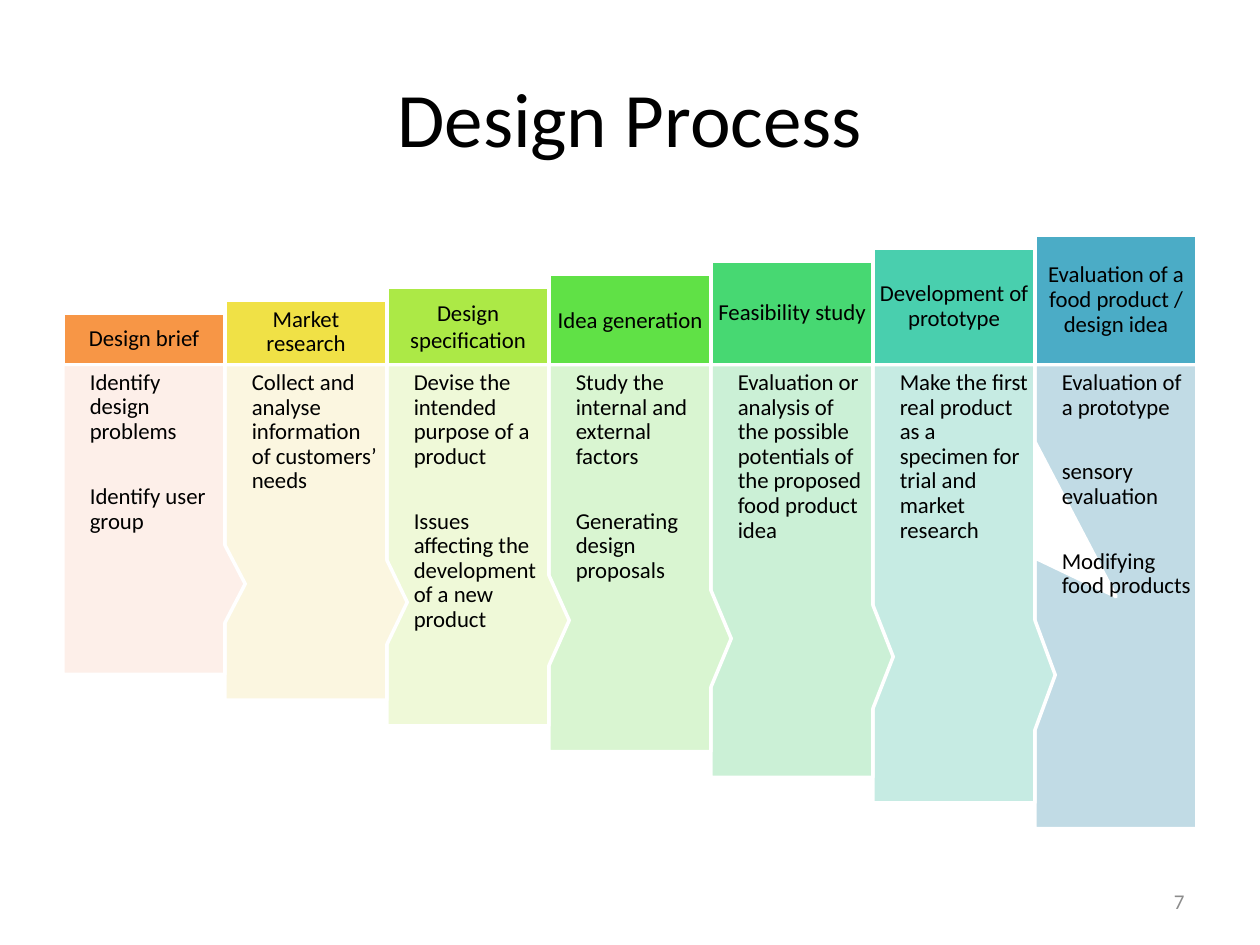
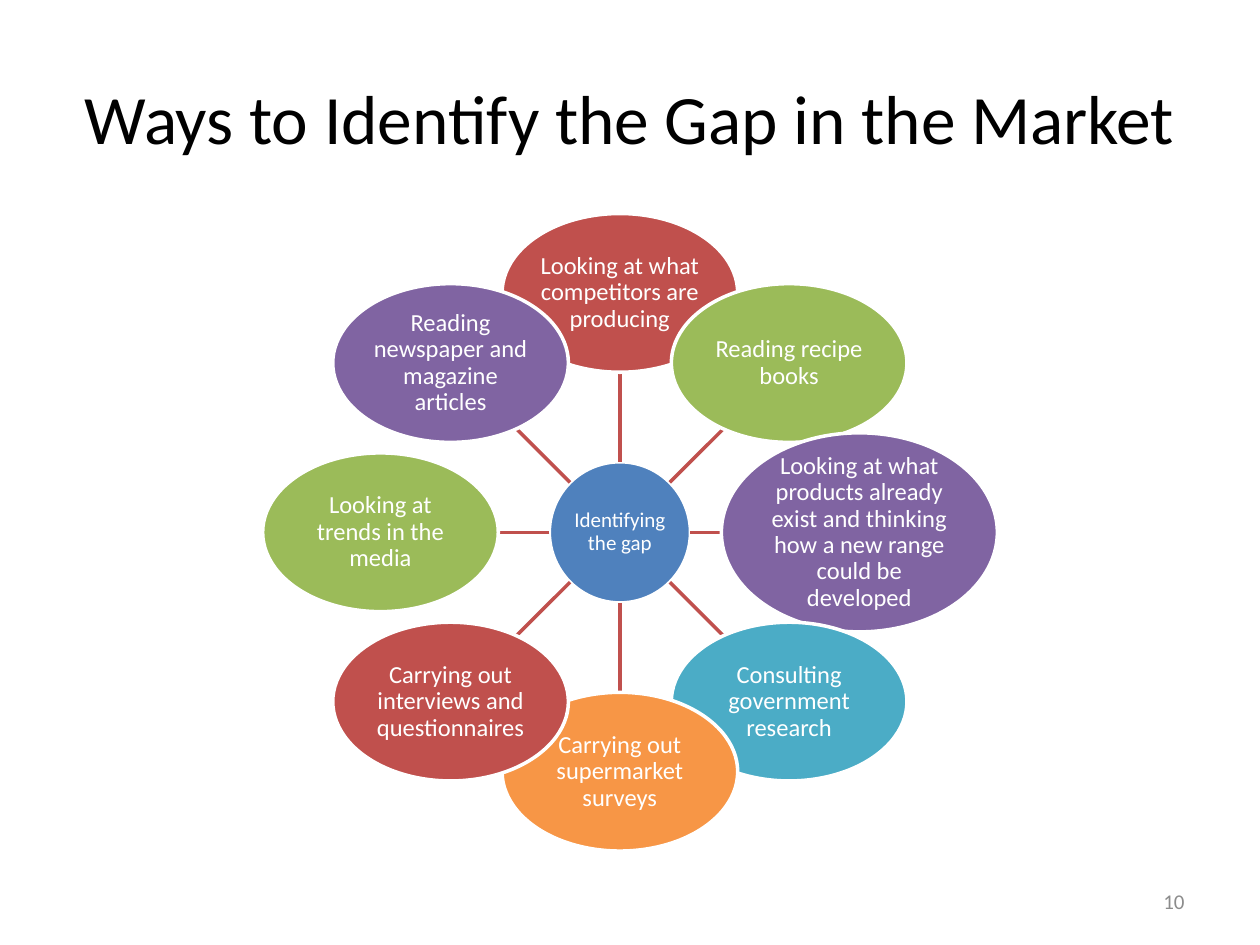
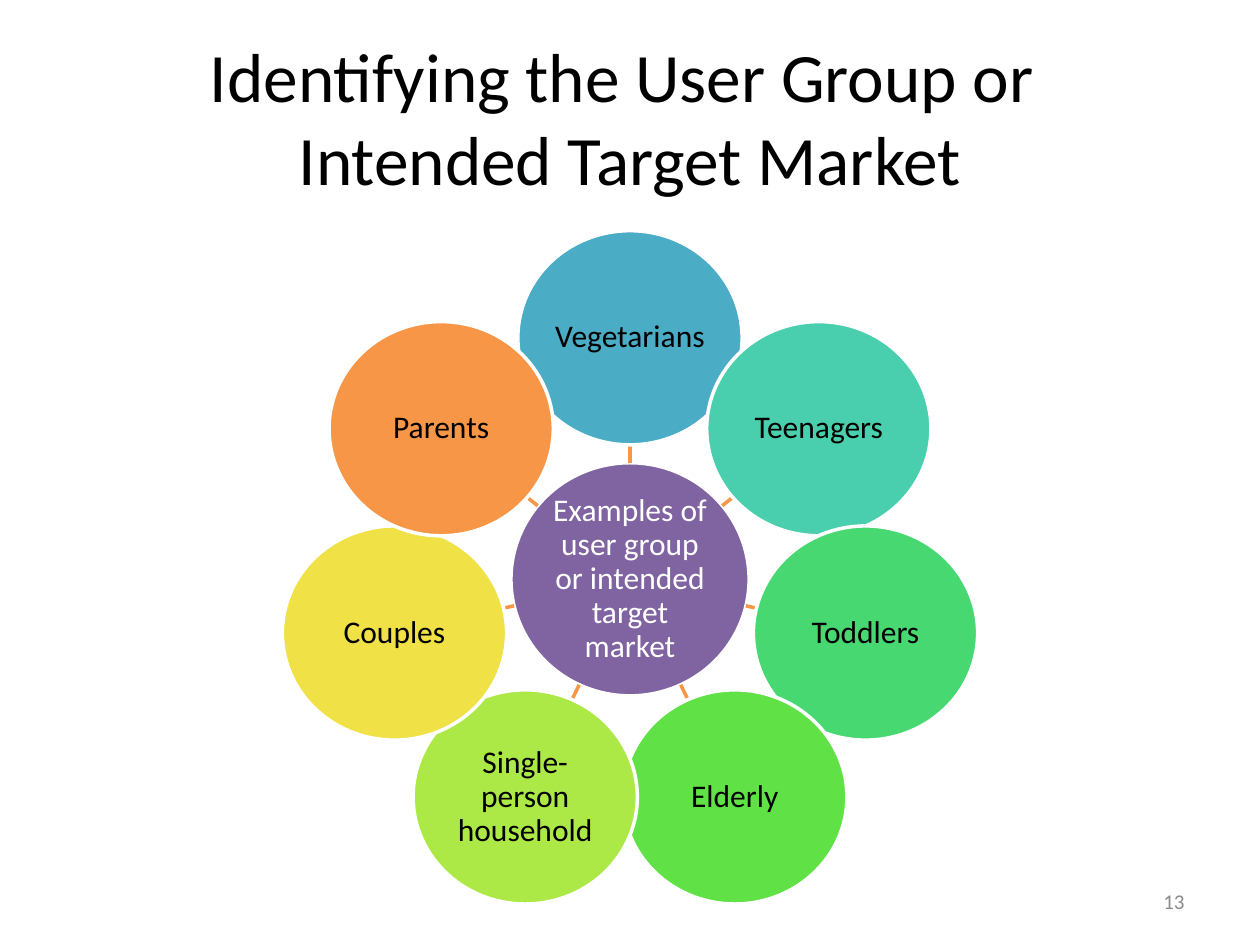
from dataclasses import dataclass
from math import cos, hypot, pi, sin

from lxml import etree
from pptx import Presentation
from pptx.dml.color import RGBColor
from pptx.enum.shapes import MSO_CONNECTOR, MSO_SHAPE
from pptx.enum.text import MSO_ANCHOR, PP_ALIGN
from pptx.oxml.ns import qn
from pptx.util import Inches, Pt

LEFT, CENTER, RIGHT = PP_ALIGN.LEFT, PP_ALIGN.CENTER, PP_ALIGN.RIGHT
TOP, MIDDLE = MSO_ANCHOR.TOP, MSO_ANCHOR.MIDDLE
RECTANGLE, ELLIPSE = MSO_SHAPE.RECTANGLE, MSO_SHAPE.OVAL
CALLOUT = MSO_SHAPE.RECTANGULAR_CALLOUT
STRAIGHT = MSO_CONNECTOR.STRAIGHT

COLUMNS, ROWS = 100, 75  # grid of square cells over the whole slide
BLANK_LAYOUT = 6


@dataclass(frozen=True)
class Theme:
    font: str = "Calibri"
    ink: str = "000000"
    white: str = "FFFFFF"
    muted: str = "8C8C8C"
    blue: str = "4F81BD"
    red: str = "C0504D"
    olive: str = "9BBB59"
    purple: str = "8064A2"
    aqua: str = "4BACC6"
    orange: str = "F79646"
    yellow: str = "F0E146"
    lime: str = "ACE946"
    green: str = "60E146"
    emerald: str = "47D872"
    teal: str = "49CFAE"
    title_size: float = 44
    long_title_size: float = 39.6
    large_size: float = 18
    node_size: float = 14
    step_size: float = 13
    small_size: float = 12
    line_width: float = 2
    tight: float = 0.9


THEME = Theme()


def write_text(frame, paragraphs, *, size, color=THEME.ink, align=CENTER,
               anchor=MIDDLE, insets=(1, 0.5, 1, 0.5), leading=1.0, gap=0):
    """Fill a text frame; insets are left, top, right, bottom in grid cells."""
    frame.word_wrap = True
    frame.vertical_anchor = anchor
    (frame.margin_left, frame.margin_top,
     frame.margin_right, frame.margin_bottom) = [Inches(i / 10) for i in insets]
    for index, text in enumerate(paragraphs):
        para = frame.add_paragraph() if index else frame.paragraphs[0]
        para.text = text
        para.alignment = align
        para.line_spacing = leading
        para.space_after = Pt(gap)
        for span in para.runs:
            span.font.name = THEME.font
            span.font.size = Pt(size)
            span.font.color.rgb = RGBColor.from_string(color)


class SlideBuilder:
    def __init__(self, theme):
        self.theme = theme
        self.deck = Presentation()
        self.deck.slide_width, self.deck.slide_height = Inches(10), Inches(7.5)
        self.page = None

    def place(self, x, y):
        """Turn a grid position or extent into slide lengths."""
        return (round(self.deck.slide_width * x / COLUMNS),
                round(self.deck.slide_height * y / ROWS))

    def start_page(self, title, number, title_size):
        layout = self.deck.slide_layouts[BLANK_LAYOUT]
        self.page = self.deck.slides.add_slide(layout)
        self.text_box(5, 3, 90, 12.5, title, size=title_size)
        self.text_box(71.67, 69.5, 23.33, 4, str(number), align=RIGHT,
                      size=self.theme.small_size, color=self.theme.muted)

    def text_box(self, left, top, width, height, text, **style):
        box = self.page.shapes.add_textbox(*self.place(left, top),
                                           *self.place(width, height))
        write_text(box.text_frame, [text], **style)

    def panel(self, kind, left, top, width, height, fill, paragraphs,
              adjustments=(), **style):
        shape = self.page.shapes.add_shape(kind, *self.place(left, top),
                                           *self.place(width, height))
        for index, value in enumerate(adjustments):
            shape.adjustments[index] = value
        shape.shadow.inherit = False
        shape.fill.solid()
        shape.fill.fore_color.rgb = RGBColor.from_string(fill)
        shape.line.color.rgb = RGBColor.from_string(self.theme.white)
        shape.line.width = Pt(self.theme.line_width)
        write_text(shape.text_frame, paragraphs, **style)

    def ellipse(self, center, extent, fill, text, **style):
        left, top = (c - e / 2 for c, e in zip(center, extent))
        self.panel(ELLIPSE, left, top, *extent, fill, [text],
                   insets=(0.1,) * 4, leading=self.theme.tight, **style)

    def spoke(self, start, end, color):
        line = self.page.shapes.add_connector(STRAIGHT, *self.place(*start),
                                              *self.place(*end))
        line.line.color.rgb = RGBColor.from_string(color)
        line.line.width = Pt(self.theme.line_width)
        etree.SubElement(line._element.spPr, qn("a:effectLst"))

    def wheel(self, center, orbit, hub, satellites, spoke_color):
        """Draw a hub, then satellites clockwise from the top, each on a spoke.

        The hub and each satellite are (extent, fill, text, style) tuples.
        """
        hub_extent, hub_fill, hub_text, hub_style = hub
        self.ellipse(center, hub_extent, hub_fill, hub_text, **hub_style)
        for index, (extent, fill, text, style) in enumerate(satellites):
            angle = 2 * pi * index / len(satellites)
            direction = sin(angle), -cos(angle)

            def along(distance):
                return [c + distance * d for c, d in zip(center, direction)]

            self.spoke(along(ellipse_reach(hub_extent, direction)),
                       along(orbit - ellipse_reach(extent, direction)),
                       spoke_color)
            self.ellipse(along(orbit), extent, fill, text, **style)


def ellipse_reach(extent, direction):
    """Distance from an ellipse's centre to its edge in a unit direction."""
    return 1 / hypot(*(2 * d / e for d, e in zip(direction, extent)))


def design_process(builder):
    theme = builder.theme
    builder.start_page("Design Process", 7, theme.title_size)
    steps = [
        ("Design brief", theme.orange, "FDEFE9",
         ["Identify design problems", "Identify user group"]),
        ("Market research", theme.yellow, "FBF6E0",
         ["Collect and analyse information of customers’ needs"]),
        ("Design specification", theme.lime, "EFF9D8",
         ["Devise the intended purpose of a product",
          "Issues affecting the development of a new product"]),
        ("Idea generation", theme.green, "D9F5D1",
         ["Study the internal and external factors",
          "Generating design proposals"]),
        ("Feasibility study", theme.emerald, "CBF0D6",
         ["Evaluation or analysis of the possible potentials of the "
          "proposed food product idea"]),
        ("Development of prototype", theme.teal, "C6EBE3",
         ["Make the first real product as a specimen for trial and "
          "market research"]),
        ("Evaluation of a food product / design idea", theme.aqua, "C1DBE5",
         ["Evaluation of a prototype", "sensory evaluation",
          "Modifying food products"]),
    ]
    baseline, width = 28.93, 90 / len(steps)
    last = len(steps) - 1
    # Later steps lie behind, so that each pointer overlaps the next column.
    for index, (heading, fill, tint, details) in reversed(list(enumerate(steps))):
        left = 5 + index * width
        header_height = 4.1 + 1.02 * index
        pointer = (0, 0) if index == last else (0.625, 0.208)
        builder.panel(CALLOUT, left, baseline, width, 24.6 + 2.04 * index, tint,
                      details, adjustments=pointer, size=theme.step_size,
                      align=LEFT, anchor=TOP, insets=(2.13, 0.5, 0.5, 0.5),
                      leading=theme.tight, gap=23)
        loose = heading in ("Design specification", "Idea generation")
        builder.panel(RECTANGLE, left, baseline - header_height, width,
                      header_height, fill, [heading], size=theme.step_size,
                      insets=(0.5,) * 4, leading=1.0 if loose else theme.tight)


def market_gap(builder):
    theme = builder.theme
    builder.start_page("Ways to Identify the Gap in the Market", 10,
                       theme.long_title_size)
    usual, wide = (18.7, 12.6), (21.9, 15.8)
    style = {"size": theme.node_size, "color": theme.white}
    ways = [
        (usual, theme.red, "Looking at what competitors are producing"),
        (usual, theme.olive, "Reading recipe books"),
        (wide, theme.purple, "Looking at what products already exist and "
                             "thinking how a new range could be developed"),
        (usual, theme.aqua, "Consulting government research"),
        (usual, theme.orange, "Carrying out supermarket surveys"),
        (usual, theme.red, "Carrying out interviews and questionnaires"),
        (usual, theme.olive, "Looking at trends in the media"),
        (usual, theme.purple, "Reading newspaper and magazine articles"),
    ]
    hub = ((11.2, 11.2), theme.blue, "Identifying the gap",
           {"size": theme.small_size, "color": theme.white})
    builder.wheel((49.2, 42.25), 19, hub,
                  [(*way, style) for way in ways], theme.red)


def user_groups(builder):
    theme = builder.theme
    builder.start_page("Identifying the User Group or \vIntended Target Market",
                       13, theme.long_title_size)
    groups = [
        ("Vegetarians", theme.aqua),
        ("Teenagers", theme.teal),
        ("Toddlers", theme.emerald),
        ("Elderly", theme.green),
        ("Single-person household", theme.lime),
        ("Couples", theme.yellow),
        ("Parents", theme.orange),
    ]
    style = {"size": theme.large_size}
    hub = ((18.9, 18.5), theme.purple,
           "Examples of user group or intended target market",
           {"size": theme.large_size, "color": theme.white})
    satellites = [((17.8, 17), fill, name, style) for name, fill in groups]
    builder.wheel((50, 45.98), 19.17, hub, satellites, theme.orange)


def main():
    builder = SlideBuilder(THEME)
    for draw_page in (design_process, market_gap, user_groups):
        draw_page(builder)
    builder.deck.save("out.pptx")


if __name__ == "__main__":
    main()
